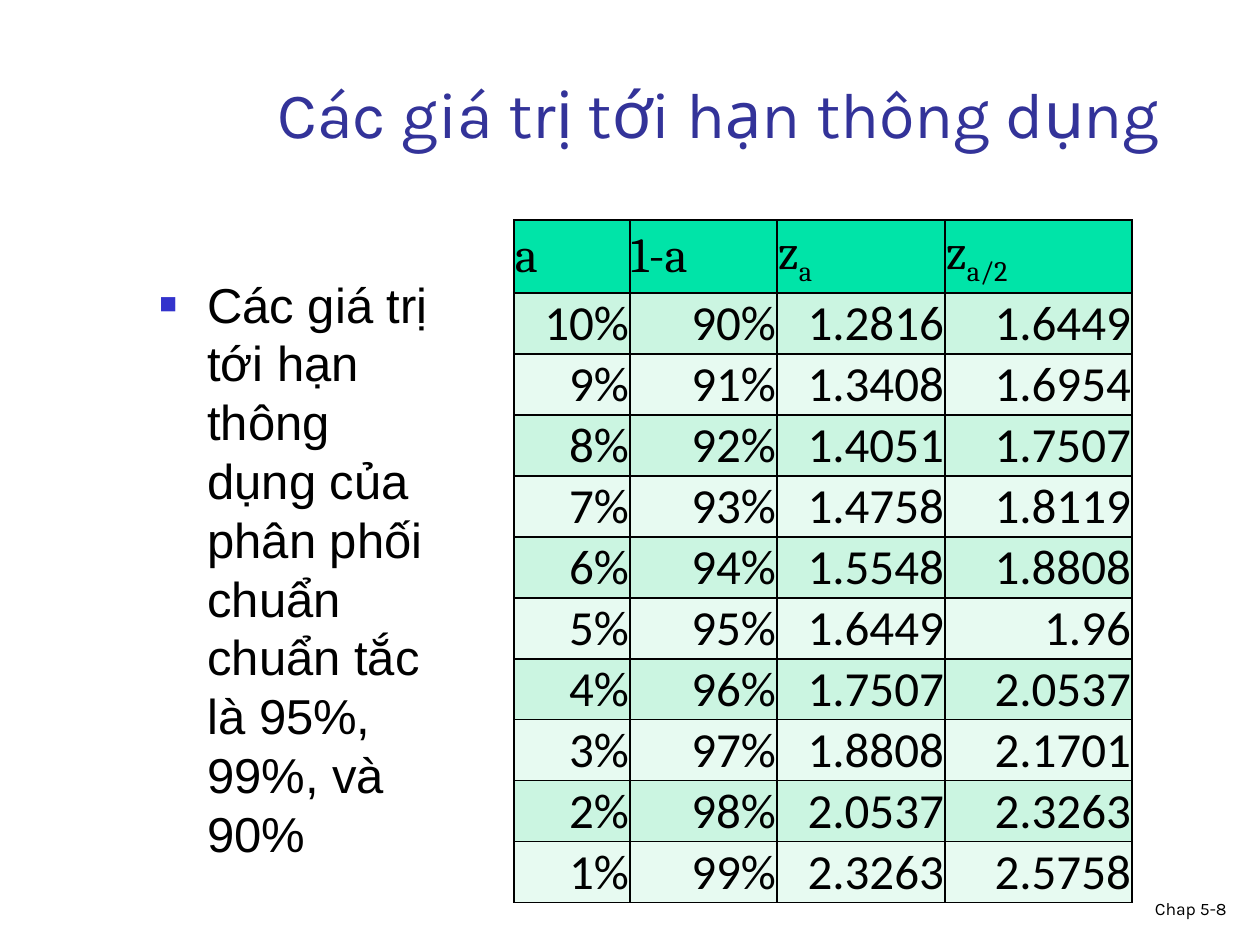
import pptx
import pptx.dml.color
import pptx.enum.text
import pptx.oxml
import pptx.oxml.ns
import pptx.util

PX = 914400 // 126
COLORS = {"title": "333399", "bullet": "3333CC", "text": "000000", "border": "000000",
          "header": "00E4A8", "odd": "CBF5E1", "even": "E7FAF1"}
ALIGN = pptx.enum.text.PP_ALIGN
ANCHOR = pptx.enum.text.MSO_ANCHOR
NS = pptx.oxml.ns.nsdecls("a")


def write(paragraph, text, font, size, color="text", baseline=None):
    run = paragraph.add_run()
    run.text = text
    for name, value in {"name": font, "size": pptx.util.Pt(size)}.items():
        setattr(run.font, name, value)
    run.font.color.rgb = pptx.dml.color.RGBColor.from_string(COLORS[color])
    if baseline:
        run.font._element.set("baseline", str(baseline))


def add_text(box, anchor, align):
    frame = slide.shapes.add_textbox(*(n * PX for n in box)).text_frame
    frame.word_wrap = True
    frame.vertical_anchor = anchor
    frame.paragraphs[0].alignment = align
    return frame.paragraphs[0]


prs = pptx.Presentation()
prs.slide_width, prs.slide_height = pptx.util.Inches(10), pptx.util.Inches(7.5)
slide = prs.slides.add_slide(prs.slide_layouts[6])

# Title
title = add_text((220, 42, 998, 116), ANCHOR.BOTTOM, ALIGN.CENTER)
write(title, "Các giá trị tới hạn thông dụng", "Karla", 37, "title")

# Bulleted explanation
explanation = add_text((147, 268, 305, 645), ANCHOR.TOP, ALIGN.LEFT)
bullet_format = explanation._p.get_or_add_pPr()
bullet_format.set("marL", str(48 * PX))
bullet_format.set("indent", str(-48 * PX))
for bullet_xml in (f'<a:buClr {NS}><a:srgbClr val="{COLORS["bullet"]}"/></a:buClr>',
                   f'<a:buSzPct {NS} val="60000"/>',
                   f'<a:buFont {NS} typeface="Arial"/>',
                   f'<a:buChar {NS} char="■"/>'):
    bullet_format.append(pptx.oxml.parse_xml(bullet_xml))
explanation.line_spacing = pptx.util.Pt(33.6)
write(explanation, "Các giá trị tới hạn thông dụng của phân phối chuẩn chuẩn tắc "
      "là 95%, 99%, và 90%", "Arial", 28)

# Critical values: text and subscript in the header, then one row per alpha
headers = [("a", ""), ("1-a", ""), ("z", "a"), ("z", "a/2")]
z_alpha = ["1.2816", "1.3408", "1.4051", "1.4758", "1.5548",
           "1.6449", "1.7507", "1.8808", "2.0537", "2.3263"]
z_half_alpha = ["1.6449", "1.6954", "1.7507", "1.8119", "1.8808",
                "1.96", "2.0537", "2.1701", "2.3263", "2.5758"]
rows = [headers]
for i, (z, z_half) in enumerate(zip(z_alpha, z_half_alpha)):
    rows.append([(value, "") for value in (f"{10 - i}%", f"{90 + i}%", z, z_half)])

column_widths = [116, 147, 168, 187]
row_heights = [73] + [61] * len(z_alpha)
table = slide.shapes.add_table(len(rows), len(headers), 514 * PX, 220 * PX,
                               sum(column_widths) * PX, sum(row_heights) * PX).table
for column, width in zip(table.columns, column_widths):
    column.width = width * PX
for row, height in zip(table.rows, row_heights):
    row.height = height * PX

for r, row_values in enumerate(rows):
    band = "header" if r == 0 else "odd" if r % 2 else "even"
    for c, (text, subscript) in enumerate(row_values):
        cell = table.cell(r, c)
        cell_format = {"margin_left": PX, "margin_right": PX, "margin_top": PX,
                       "margin_bottom": 0,
                       "vertical_anchor": ANCHOR.BOTTOM if r else ANCHOR.MIDDLE}
        for name, value in cell_format.items():
            setattr(cell, name, value)
        paragraph = cell.text_frame.paragraphs[0]
        paragraph.alignment = ALIGN.RIGHT if r else ALIGN.LEFT
        font = "Calibri" if r else "Cambria"
        write(paragraph, text, font, 28)
        if subscript:
            write(paragraph, subscript, font, 28, baseline=-25000)
        # Borders come before the fill in the cell properties
        for side in ("lnL", "lnR", "lnT", "lnB"):
            cell._tc.get_or_add_tcPr().append(pptx.oxml.parse_xml(
                f'<a:{side} {NS} w="12700"><a:solidFill><a:srgbClr val="{COLORS["border"]}"/>'
                f'</a:solidFill></a:{side}>'))
        cell.fill.solid()
        cell.fill.fore_color.rgb = pptx.dml.color.RGBColor.from_string(COLORS[band])

# Page label
page_label = add_text((977, 882, 262, 43), ANCHOR.BOTTOM, ALIGN.RIGHT)
write(page_label, "Chap 5-8", "Karla", 10)

prs.save("out.pptx")
